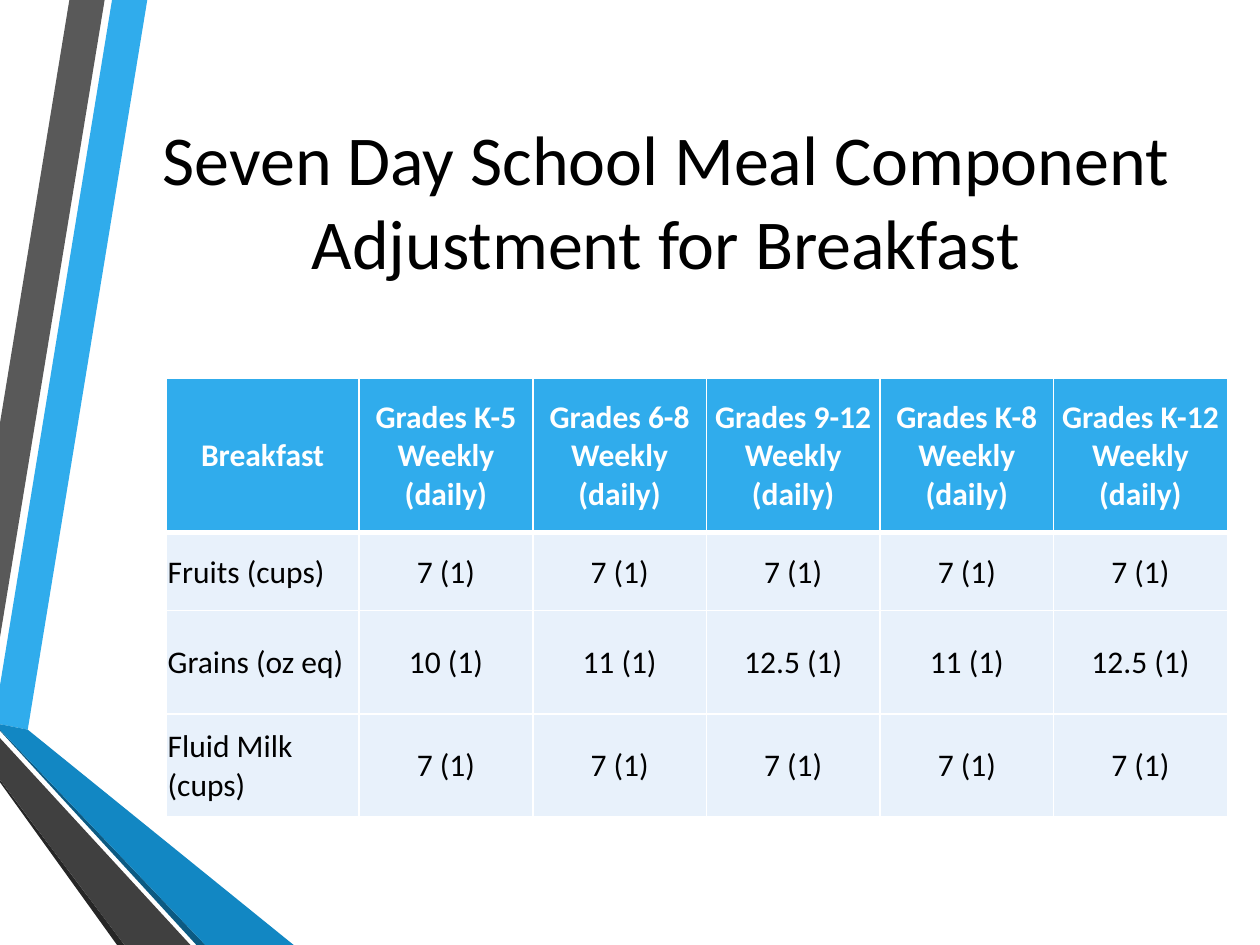
from lxml import etree
from pptx import Presentation
from pptx.dml.color import RGBColor
from pptx.enum.text import MSO_ANCHOR, PP_ALIGN
from pptx.oxml.ns import qn
from pptx.util import Cm, Pt

LEFT, CENTER = PP_ALIGN.LEFT, PP_ALIGN.CENTER
MIDDLE = MSO_ANCHOR.MIDDLE
FONT = "Calibri"

BLUE = RGBColor(0x30, 0xAC, 0xEC)
DEEP = RGBColor(0x12, 0x87, 0xC3)
NAVY = RGBColor(0x0C, 0x5A, 0x82)
GRAY = RGBColor(0x59, 0x59, 0x59)
DARK = RGBColor(0x40, 0x40, 0x40)
COAL = RGBColor(0x26, 0x26, 0x26)
PALE = RGBColor(0xE8, 0xF1, 0xFB)
WHITE = RGBColor(0xFF, 0xFF, 0xFF)
BLACK = RGBColor(0, 0, 0)

# Ribbon outlines in cm, from back to front
RIBBONS = [
    (BLUE, [(0, 13.82), (0, 14.6), (0.56, 14.71), (2.97, 0), (2.26, 0)]),
    (GRAY, [(2.11, 0), (1.4, 0), (0, 8.53), (0, 12.85)]),
    (COAL, [(0, 15.72), (0, 15.77), (2.36, 19.05), (2.51, 19.05)]),
    (NAVY, [(0, 14.71), (0, 14.73), (3.96, 19.05), (4.14, 19.05)]),
    (DEEP, [(0, 14.71), (4.14, 19.05), (5.92, 19.05), (0.56, 14.71), (0, 14.6)]),
    (DARK, [(0, 15.72), (2.51, 19.05), (3.84, 19.05), (0, 14.88)]),
]

GRADES = ["K-5", "6-8", "9-12", "K-8", "K-12"]
ROWS = [
    ["Breakfast"] + [f"Grades {grade}\vWeekly (daily)" for grade in GRADES],
    ["Fruits (cups)"] + ["7 (1)"] * 5,
    ["Grains (oz eq)", "10 (1)", "11 (1)", "12.5 (1)", "11 (1)", "12.5 (1)"],
    ["Fluid Milk (cups)"] + ["7 (1)"] * 5,
]
WIDTHS = [3.89] + [3.5] * 5
HEIGHTS = [3.12, 1.57, 2.08, 2.08]


def add_ribbon(slide, color, points):
    spots = [(Cm(x), Cm(y)) for x, y in points]
    pen = slide.shapes.build_freeform(*spots[0])
    pen.add_line_segments(spots[1:], close=True)
    shape = pen.convert_to_shape()
    shape.shadow.inherit = False
    shape.fill.solid()
    shape.fill.fore_color.rgb = color
    shape.line.fill.background()


def set_text(frame, text, size, color, align, bold=False):
    frame.word_wrap = True
    para = frame.paragraphs[0]
    para.text = text
    para.alignment = align
    for run in para.runs:
        run.font.name = FONT
        run.font.size = Pt(size)
        run.font.bold = bold
        run.font.color.rgb = color


def add_title(slide, text):
    box = slide.shapes.add_textbox(Cm(2.72), Cm(1.27), Cm(21.41), Cm(5.51))
    box.text_frame.vertical_anchor = MIDDLE
    set_text(box.text_frame, text, 40, BLACK, CENTER)


def set_border(cell, side, width):
    props = cell._tc.get_or_add_tcPr()
    line = etree.SubElement(props, qn(f"a:ln{side}"), w=str(Pt(width)))
    fill = etree.SubElement(line, qn("a:solidFill"))
    etree.SubElement(fill, qn("a:srgbClr"), val=str(WHITE))


def style_cell(cell, text, row, col):
    head = row == 0
    cell.margin_left = cell.margin_right = cell.margin_top = Cm(0.03)
    cell.margin_bottom = 0
    cell.vertical_anchor = MIDDLE
    align = CENTER if head or col else LEFT
    set_text(cell.text_frame, text, 18, WHITE if head else BLACK, align, head)
    # Borders come before the fill; the header rule is thicker
    for side in "LRTB":
        rule = (row, side) in [(0, "B"), (1, "T")]
        set_border(cell, side, 3 if rule else 1)
    cell.fill.solid()
    cell.fill.fore_color.rgb = BLUE if head else PALE


def add_meals(slide):
    frame = slide.shapes.add_table(len(ROWS), len(WIDTHS), Cm(3.35), Cm(7.62),
                                   Cm(sum(WIDTHS)), Cm(sum(HEIGHTS)))
    table = frame.table
    for column, width in zip(table.columns, WIDTHS):
        column.width = Cm(width)
    for line, height in zip(table.rows, HEIGHTS):
        line.height = Cm(height)
    for row, texts in enumerate(ROWS):
        for col, text in enumerate(texts):
            style_cell(table.cell(row, col), text, row, col)


def main():
    deck = Presentation()
    deck.slide_width, deck.slide_height = Cm(25.4), Cm(19.05)
    slide = deck.slides.add_slide(deck.slide_layouts[6])

    # Side ribbons
    for color, points in RIBBONS:
        add_ribbon(slide, color, points)

    # Title and table
    add_title(slide, "Seven Day School Meal Component Adjustment for Breakfast")
    add_meals(slide)

    deck.save("out.pptx")


if __name__ == "__main__":
    main()
